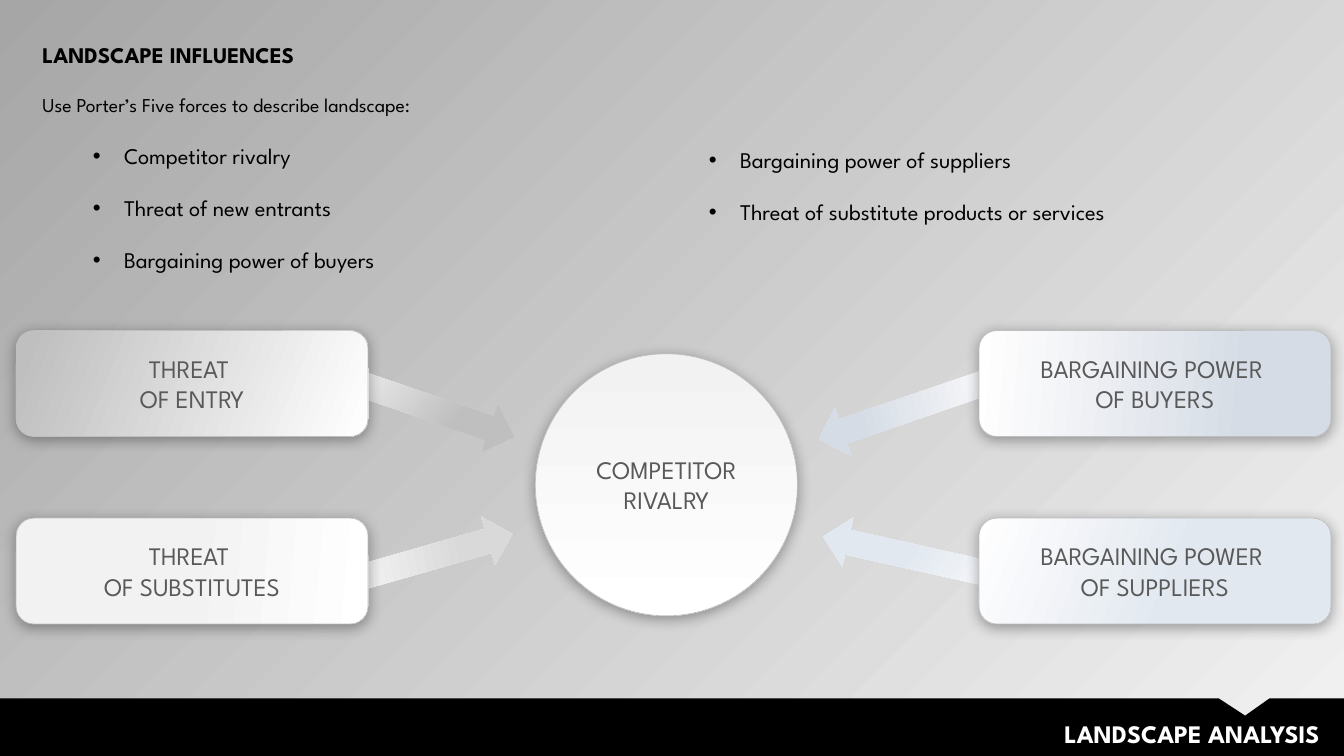
import pptx
import pptx.dml.color
import pptx.enum.shapes
import pptx.enum.text
import pptx.oxml
import pptx.oxml.ns
import pptx.util
from lxml import etree

Inches, Pt = pptx.util.Inches, pptx.util.Pt
SHAPE = pptx.enum.shapes.MSO_SHAPE
ALIGN = pptx.enum.text.PP_ALIGN
ANCHOR = pptx.enum.text.MSO_ANCHOR
FONT = "League Spartan"
WIDTH, HEIGHT = 13.33, 7.5

# column, row, lines, box stops, box angle, arrow stops, arrow angle,
# arrow centre within the diagram, arrow rotation
FORCES = [
    (0, 0, ["THREAT ", "OF ENTRY"], [(4, "BFBFBF"), (100, "FFFFFF")], 22,
     [(0, "FFFFFF"), (67, "BFBFBF")], 22, (4.0, 0.73), 19),
    (0, 1, ["THREAT ", "OF SUBSTITUTES"], [(48, "F2F2F2"), (100, "FFFFFF")], 5,
     [(0, "FFFFFF"), (73, "D9D9D9")], 5, (3.97, 2.29), 344),
    (1, 0, ["BARGAINING POWER ", "OF BUYERS"], [(0, "FFFFFF"), (76, "D6DCE5")], 5,
     [(0, "FFFFFF"), (76, "D6DCE5")], 5, (8.9, 0.76), 161.1),
    (1, 1, ["BARGAINING POWER ", "OF SUPPLIERS"], [(0, "FFFFFF"), (57, "E2E8F0")], 22,
     [(0, "FFFFFF"), (57, "E2E8F0")], 22, (8.97, 2.26), 192.6),
]

HEADING = {"size": 16, "bold": True}
INTRO = {"size": 14}
BULLET = {"size": 16, "level": 1}
LEFT_LIST = [
    ("LANDSCAPE INFLUENCES", HEADING),
    ("Use Porter’s Five forces to describe landscape:", INTRO),
    ("Competitor rivalry", BULLET),
    ("Threat of new entrants", BULLET),
    ("Bargaining power of buyers", BULLET),
]
RIGHT_LIST = [
    ("Bargaining power of suppliers", BULLET),
    ("Threat of substitute products or services", BULLET),
]


def color(hex_string):
    return pptx.dml.color.RGBColor.from_string(hex_string)


def paint_gradient(fill, stops, clockwise):
    fill.gradient()
    fill.gradient_angle = (360 - clockwise) % 360
    for stop, (percent, hex_string) in zip(fill.gradient_stops, stops):
        stop.position = percent / 100
        stop.color.rgb = color(hex_string)


def place(shape, box):
    for side, length in zip(("left", "top", "width", "height"), box):
        setattr(shape, side, Inches(length))


def format_font(font, hex_string, size, bold=False):
    values = {"name": FONT, "size": Pt(size), "bold": bold}
    for attribute, value in values.items():
        setattr(font, attribute, value)
    font.color.rgb = color(hex_string)


def format_frame(frame, anchor):
    values = {"word_wrap": True, "vertical_anchor": anchor,
              "auto_size": pptx.enum.text.MSO_AUTO_SIZE.NONE}
    for attribute, value in values.items():
        setattr(frame, attribute, value)


def set_bullet(paragraph, level):
    properties = paragraph._p.get_or_add_pPr()
    properties.set("marL", str(Inches(0.81 * level)))
    properties.set("indent", str(Inches(-0.31 * level)))
    tag = "a:buChar" if level else "a:buNone"
    bullet = etree.SubElement(properties, pptx.oxml.ns.qn(tag))
    if level:
        bullet.set("char", "•")


def add_background(slide):
    fill = slide.background.fill
    paint_gradient(fill, [(0, "F2F2F2"), (100, "A6A6A6")], 225)
    light = slide.background._cSld.xpath(".//a:gs/a:srgbClr")[0]
    etree.SubElement(light, pptx.oxml.ns.qn("a:alpha")).set("val", "40000")


def add_footer(slide, box):
    left, top, width, height = box
    right, bottom = left + width, top + height
    # Black band with a notch in its upper edge
    outline = [(left, top), (12.09, top), (12.35, top + 0.17), (12.59, top),
               (right, top), (right, bottom), (left, bottom)]
    points = [(Inches(x), Inches(y)) for x, y in outline]
    builder = slide.shapes.build_freeform(*points[0], scale=1.0)
    builder.add_line_segments(points[1:], close=True)
    band = builder.convert_to_shape()
    band.shadow.inherit = False
    band.fill.solid()
    band.fill.fore_color.rgb = color("000000")
    band.line.fill.background()
    # Title on top of the band
    title = slide.shapes.title
    title.element.addprevious(band.element)
    place(title, (right - 6.92, top + 0.15, 6.78, 0.4))
    title.text_frame.text = "LANDSCAPE ANALYSIS"
    format_frame(title.text_frame, ANCHOR.TOP)
    heading = title.text_frame.paragraphs[0]
    heading.alignment = ALIGN.RIGHT
    format_font(heading.runs[0].font, "FFFFFF", 18, True)


def fill_list(placeholder, box, entries):
    place(placeholder, box)
    frame = placeholder.text_frame
    format_frame(frame, ANCHOR.TOP)
    frame.text = "\n".join(text for text, _ in entries)
    for index, (paragraph, (_, style)) in enumerate(zip(frame.paragraphs, entries)):
        level = style.get("level", 0)
        values = {"level": level, "alignment": ALIGN.LEFT, "line_spacing": 1.0,
                  "space_before": Pt(6 if index else 0), "space_after": Pt(12)}
        for attribute, value in values.items():
            setattr(paragraph, attribute, value)
        set_bullet(paragraph, level)
        format_font(paragraph.runs[0].font, "000000", style["size"],
                    style.get("bold", False))


def add_panel(slide, kind, box, lines, stops, clockwise):
    panel = slide.shapes.add_shape(kind, *map(Inches, box))
    paint_gradient(panel.fill, stops, clockwise)
    panel.line.color.rgb = color("BFBFBF")
    panel.line.width = Pt(0.5)
    # Soft shadow below the panel
    panel.shadow.inherit = False
    effects = panel.element.spPr.find(pptx.oxml.ns.qn("a:effectLst"))
    effects.append(pptx.oxml.parse_xml(
        f'<a:outerShdw {pptx.oxml.ns.nsdecls("a")} blurRad="{Pt(10)}" dist="{Pt(2)}" '
        'dir="5400000" algn="t" rotWithShape="0"><a:srgbClr val="000000">'
        '<a:alpha val="35000"/></a:srgbClr></a:outerShdw>'))
    format_frame(panel.text_frame, ANCHOR.MIDDLE)
    panel.text_frame.text = "\n".join(lines)
    for paragraph in panel.text_frame.paragraphs:
        paragraph.alignment = ALIGN.CENTER
        format_font(paragraph.runs[0].font, "595959", 18)


def add_arrow(slide, center, stops, clockwise, rotation):
    width, height = 1.98, 0.5
    box = (center[0] - width / 2, center[1] - height / 2, width, height)
    arrow = slide.shapes.add_shape(SHAPE.STRIPED_RIGHT_ARROW, *map(Inches, box))
    arrow.shadow.inherit = False
    paint_gradient(arrow.fill, stops, clockwise)
    arrow.line.fill.background()
    arrow.rotation = rotation


def add_forces(slide, box):
    left, top, width, height = box
    panel_width, panel_height = 3.49, 1.05
    # Arrows first, so that the panels cover their tails
    for *_, stops, clockwise, (x, y), rotation in FORCES:
        add_arrow(slide, (left + x, top + y), stops, clockwise, rotation)
    for column, row, lines, stops, clockwise, *_ in FORCES:
        panel_box = (left + column * (width - panel_width),
                     top + row * (height - panel_height), panel_width, panel_height)
        add_panel(slide, SHAPE.ROUNDED_RECTANGLE, panel_box, lines, stops, clockwise)
    # Rivalry in the centre
    add_panel(slide, SHAPE.OVAL, (left + 5.15, top + 0.23, 2.6, 2.6),
              ["COMPETITOR RIVALRY"], [(0, "F2F2F2"), (100, "FFFFFF")], 90)


def main():
    deck = pptx.Presentation()
    deck.slide_width, deck.slide_height = Inches(WIDTH), Inches(HEIGHT)
    slide = deck.slides.add_slide(deck.slide_layouts.get_by_name("Two Content"))
    add_background(slide)
    add_footer(slide, (0, 6.93, WIDTH, HEIGHT - 6.93))
    fill_list(slide.placeholders[1], (0.32, 0.36, 6.1, 2.34), LEFT_LIST)
    fill_list(slide.placeholders[2], (6.43, 1.4, 6.32, 1.3), RIGHT_LIST)
    add_forces(slide, (0.16, 3.28, 13.04, 2.91))
    deck.save("out.pptx")


if __name__ == "__main__":
    main()
